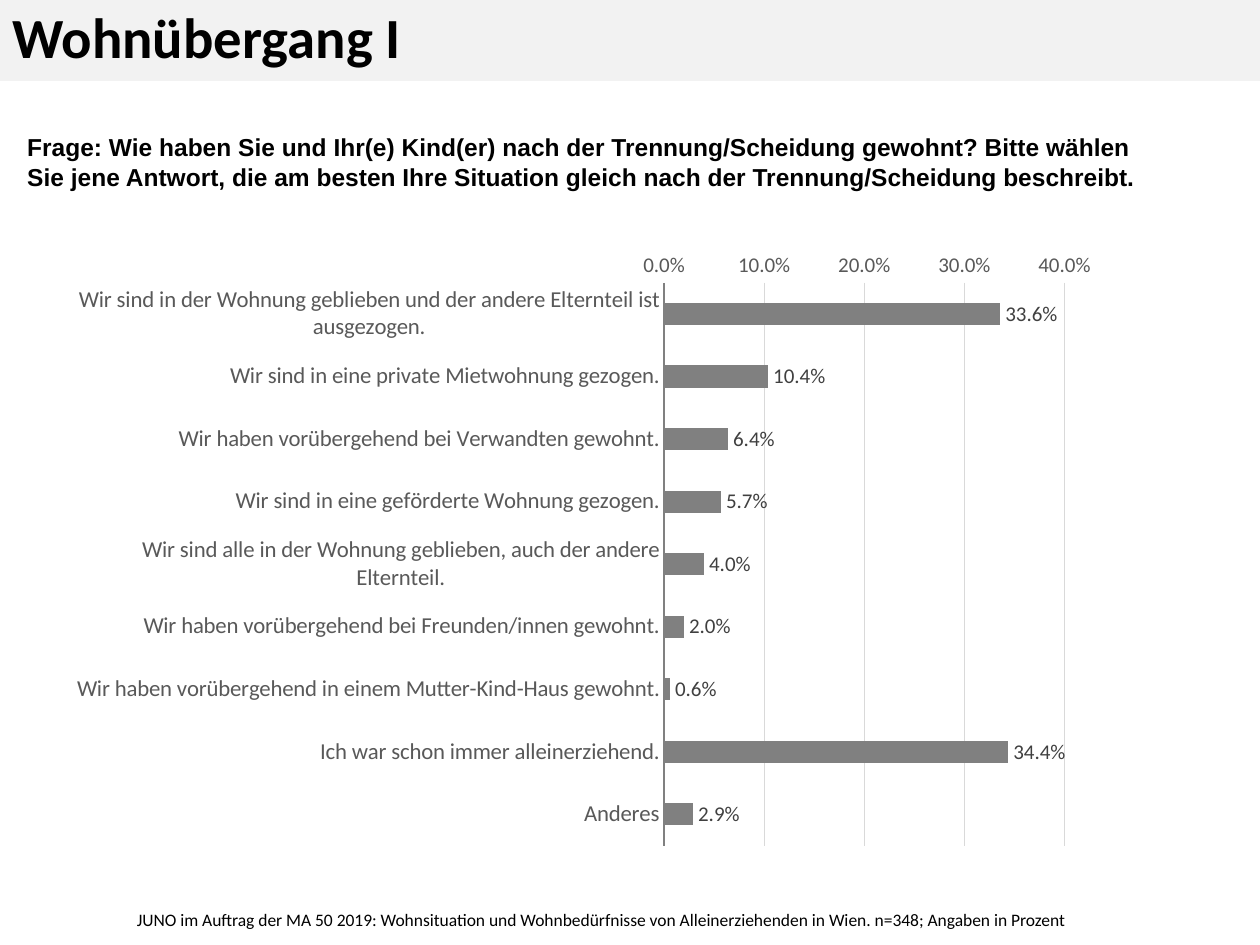
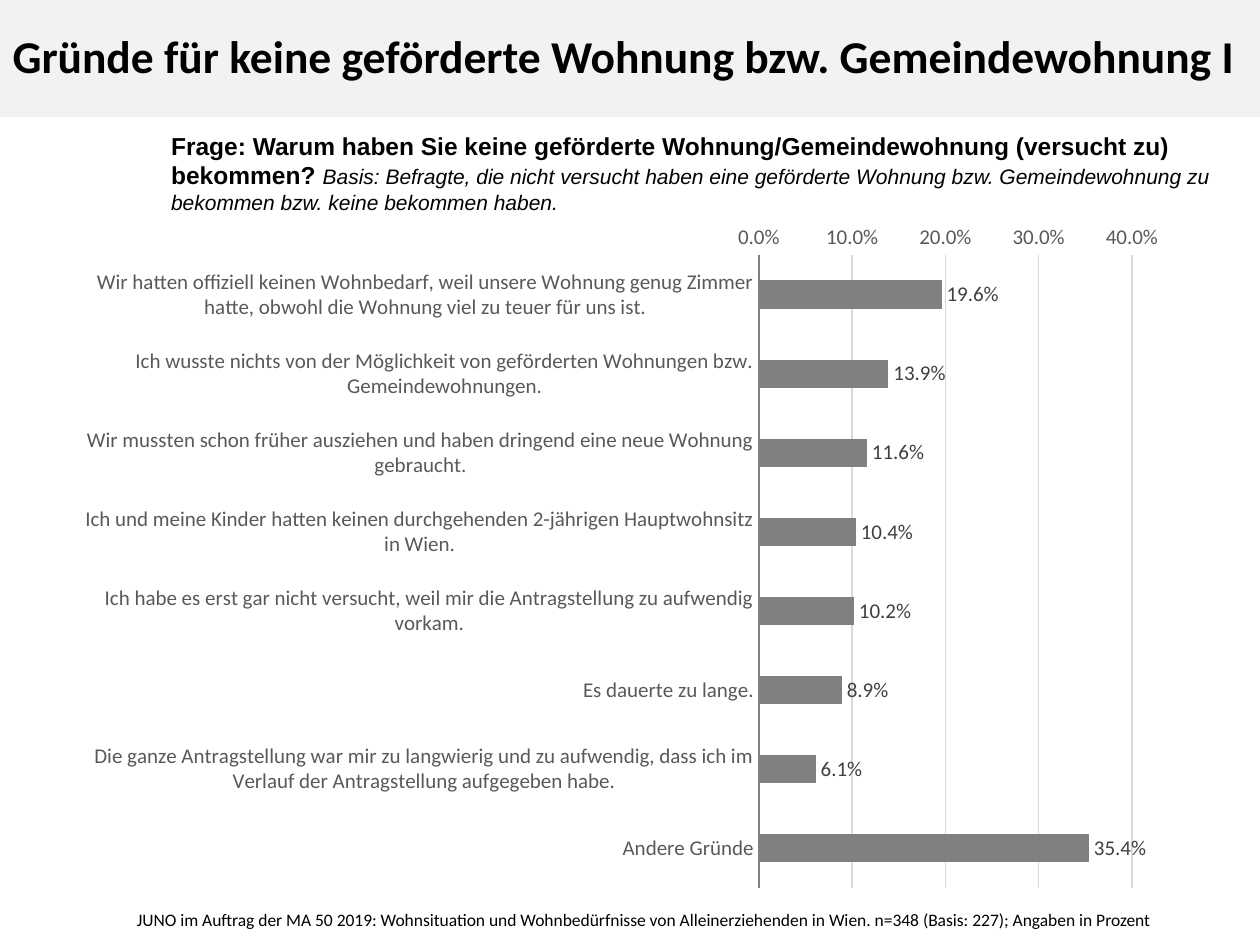
from lxml.etree import SubElement
from pptx import Presentation
from pptx.chart.data import CategoryChartData
from pptx.dml.color import RGBColor
from pptx.enum.chart import XL_CHART_TYPE, XL_LABEL_POSITION, XL_TICK_MARK
from pptx.enum.text import MSO_ANCHOR, MSO_AUTO_SIZE, PP_ALIGN
from pptx.oxml.ns import qn
from pptx.util import Cm, Pt

HUES = {
    "band": "F2F2F2", "text": "000000", "bar": "808080",
    "grid": "D9D9D9", "axis": "595959", "value": "404040",
}
HEAD, BODY = "Arial", "Calibri"
FOOT_BOX = (2.51, 18.19, 21.29, 0.69)
SOURCE = ("JUNO im Auftrag der MA 50 2019: Wohnsituation und Wohnbedürfnisse "
          "von Alleinerziehenden in Wien. n=348{}; Angaben in Prozent")

# Boxes are left, top, width, height in centimetres
SLIDES = [
    {
        "title": "Wohnübergang I",
        "size": 32.4,
        "band": 1.63,
        "ask": [("Frage: Wie haben Sie und Ihr(e) Kind(er) nach der Trennung/Scheidung "
                 "gewohnt? Bitte wählen Sie jene Antwort, die am besten Ihre Situation "
                 "gleich nach der Trennung/Scheidung beschreibt.",
                 {"size": Pt(14), "bold": True})],
        "ask_box": (0.3, 2.54, 23.5, 1.45),
        "base": "",
        "chart_box": (1.14, 4.85, 21.29, 12.45),
        "plot_box": (13.39, 5.7, 8.07, 11.35),
        "cat_size": 13,
        "data": [
            ("Wir sind in der Wohnung geblieben und der andere Elternteil ist ausgezogen.", 0.336),
            ("Wir sind in eine private Mietwohnung gezogen.", 0.104),
            ("Wir haben vorübergehend bei Verwandten gewohnt.", 0.064),
            ("Wir sind in eine geförderte Wohnung gezogen.", 0.057),
            ("Wir sind alle in der Wohnung geblieben, auch der andere Elternteil.", 0.04),
            ("Wir haben vorübergehend bei Freunden/innen gewohnt.", 0.02),
            ("Wir haben vorübergehend in einem Mutter-Kind-Haus gewohnt.", 0.006),
            ("Ich war schon immer alleinerziehend.", 0.344),
            ("Anderes", 0.029),
        ],
    },
    {
        "title": "Gründe für keine geförderte Wohnung bzw. Gemeindewohnung I",
        "size": 26,
        "band": 2.36,
        "ask": [("Frage: Warum haben Sie keine geförderte Wohnung/Gemeindewohnung "
                 "(versucht zu) bekommen? ", {"size": Pt(14), "bold": True}),
                ("Basis: Befragte, die nicht versucht haben eine geförderte Wohnung bzw. "
                 "Gemeindewohnung zu bekommen bzw. keine bekommen haben.",
                 {"size": Pt(12), "italic": True})],
        "ask_box": (3.2, 2.51, 22.2, 1.96),
        "base": " (Basis: 227)",
        "chart_box": (1.47, 4.27, 22.33, 13.92),
        "plot_box": (15.3, 5.14, 7.52, 12.76),
        "cat_size": 12,
        "data": [
            ("Wir hatten offiziell keinen Wohnbedarf, weil unsere Wohnung genug Zimmer "
             "hatte, obwohl die Wohnung viel zu teuer für uns ist.", 0.196),
            ("Ich wusste nichts von der Möglichkeit von geförderten Wohnungen bzw. "
             "Gemeindewohnungen.", 0.139),
            ("Wir mussten schon früher ausziehen und haben dringend eine neue Wohnung "
             "gebraucht.", 0.116),
            ("Ich und meine Kinder hatten keinen durchgehenden 2-jährigen Hauptwohnsitz "
             "in Wien.", 0.104),
            ("Ich habe es erst gar nicht versucht, weil mir die Antragstellung zu "
             "aufwendig vorkam.", 0.102),
            ("Es dauerte zu lange.", 0.089),
            ("Die ganze Antragstellung war mir zu langwierig und zu aufwendig, dass ich im "
             "Verlauf der Antragstellung aufgegeben habe.", 0.061),
            ("Andere Gründe", 0.354),
        ],
    },
]


def paint(target, hue):
    """Fill a shape or bar with a flat colour."""
    target.fill.solid()
    target.fill.fore_color.rgb = RGBColor.from_string(HUES[hue])


def style(font, hue="text", **form):
    for key, value in form.items():
        setattr(font, key, value)
    font.color.rgb = RGBColor.from_string(HUES[hue])


def add_title(slide, text, size, box):
    """Title in a grey band."""
    title = slide.shapes.title
    for key, value in zip(("left", "top", "width", "height"), box):
        setattr(title, key, Cm(value))
    paint(title, "band")
    frame = title.text_frame
    frame.text = text
    frame.auto_size = MSO_AUTO_SIZE.NONE
    frame.vertical_anchor = MSO_ANCHOR.MIDDLE
    para = frame.paragraphs[0]
    para.alignment = PP_ALIGN.LEFT
    para.line_spacing = 0.9
    style(para.runs[0].font, name=BODY, size=Pt(size), bold=True)


def add_text(slide, runs, face, box):
    """Wrapped text box with one paragraph of styled runs."""
    frame = slide.shapes.add_textbox(*map(Cm, box)).text_frame
    frame.word_wrap = True
    for text, form in runs:
        run = frame.paragraphs[0].add_run()
        run.text = text
        style(run.font, name=face, **form)


def set_plot(chart, box, plot):
    """Fix the inner plot area as fractions of the chart box."""
    area = chart._chartSpace.chart.plotArea
    for old in area.findall(qn("c:layout")):
        area.remove(old)
    layout = area.makeelement(qn("c:layout"))
    area.insert(0, layout)
    manual = SubElement(layout, qn("c:manualLayout"))
    parts = {
        "layoutTarget": "inner", "xMode": "edge", "yMode": "edge",
        "x": (plot[0] - box[0]) / box[2], "y": (plot[1] - box[1]) / box[3],
        "w": plot[2] / box[2], "h": plot[3] / box[3],
    }
    for key, value in parts.items():
        SubElement(manual, qn(f"c:{key}")).set("val", str(value))


def add_bars(slide, rows, size, box, plot_box):
    """Horizontal bars, first answer on top."""
    data = CategoryChartData(number_format="0.0%")
    data.categories = [name for name, _ in rows]
    data.add_series("Series 1", [value for _, value in rows])
    chart = slide.shapes.add_chart(
        XL_CHART_TYPE.BAR_CLUSTERED, *map(Cm, box), data).chart
    chart.has_legend = chart.has_title = False
    style(chart.font, name=BODY, size=Pt(10))

    # Axes
    cats, vals = chart.category_axis, chart.value_axis
    for axis, points in ((cats, size), (vals, 12)):
        axis.major_tick_mark = axis.minor_tick_mark = XL_TICK_MARK.NONE
        style(axis.tick_labels.font, "axis", name=BODY, size=Pt(points))
    cats.reverse_order = True
    cats.has_major_gridlines = False
    scale = {"minimum_scale": 0, "maximum_scale": 0.4, "major_unit": 0.1,
             "has_major_gridlines": True}
    for key, value in scale.items():
        setattr(vals, key, value)
    vals.tick_labels.number_format = "0.0%"
    vals.tick_labels.number_format_is_linked = False
    vals.format.line.fill.background()
    for line, hue in ((cats.format.line, "bar"),
                      (vals.major_gridlines.format.line, "grid")):
        line.color.rgb = RGBColor.from_string(HUES[hue])
        line.width = Pt(0.75)

    # Bars and their values
    plot = chart.plots[0]
    plot.gap_width = 182
    plot.vary_by_categories = False
    paint(plot.series[0].format, "bar")
    plot.has_data_labels = True
    labels = plot.data_labels
    form = {"show_value": True, "number_format": "0.0%",
            "number_format_is_linked": False,
            "position": XL_LABEL_POSITION.OUTSIDE_END}
    for key, value in form.items():
        setattr(labels, key, value)
    style(labels.font, "value", name=BODY, size=Pt(12))
    set_plot(chart, box, plot_box)


def add_page(deck, page):
    """One survey question with its answers."""
    slide = deck.slides.add_slide(deck.slide_layouts[5])
    add_title(slide, page["title"], page["size"], (0, 0, 25.4, page["band"]))
    add_text(slide, page["ask"], HEAD, page["ask_box"])
    add_bars(slide, page["data"], page["cat_size"], page["chart_box"], page["plot_box"])
    add_text(slide, [(SOURCE.format(page["base"]), {"size": Pt(10)})], BODY, FOOT_BOX)


def main():
    deck = Presentation()
    deck.slide_width, deck.slide_height = Cm(25.4), Cm(19.05)
    for page in SLIDES:
        add_page(deck, page)
    deck.save("out.pptx")


if __name__ == "__main__":
    main()
